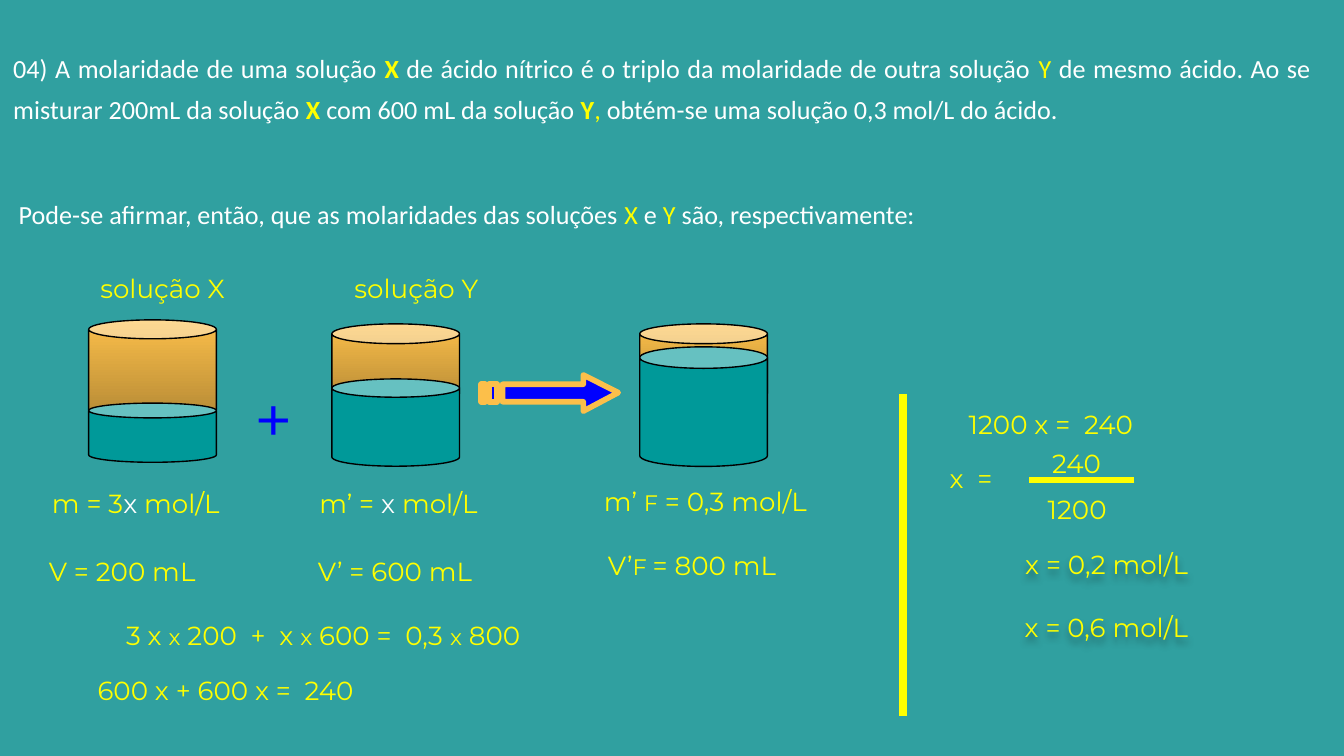
from lxml import etree
from pptx import Presentation
from pptx.dml.color import RGBColor
from pptx.enum.shapes import MSO_CONNECTOR, MSO_SHAPE
from pptx.enum.text import MSO_ANCHOR, MSO_AUTO_SIZE, PP_ALIGN
from pptx.oxml import parse_xml
from pptx.oxml.ns import nsdecls, qn
from pptx.util import Pt

CAN = MSO_SHAPE.CAN
LINE = MSO_CONNECTOR.STRAIGHT
MIDDLE, TOP = MSO_ANCHOR.MIDDLE, MSO_ANCHOR.TOP
LEFT, MID, RIGHT = PP_ALIGN.LEFT, PP_ALIGN.CENTER, PP_ALIGN.RIGHT
FULL = PP_ALIGN.JUSTIFY
FIT, FIXED = MSO_AUTO_SIZE.SHAPE_TO_FIT_TEXT, MSO_AUTO_SIZE.NONE

THEME = {
    "back": "30A0A0", "white": "FFFFFF", "yellow": "FFFF00", "blue": "0000FF",
    "black": "000000", "amber": "FCBF4A", "brown": "B48935", "teal": "009999",
    "body": "Calibri", "math": "Montserrat",
    "size": 14, "small": 12, "big": 36,
}

# Run styles: colour, size, bold
STYLES = {
    "w": ("white", "size", False),
    "y": ("yellow", "size", False),
    "b": ("yellow", "size", True),
    "s": ("yellow", "small", False),
    "p": ("blue", "big", False),
}

# Problem statement: box, runs
STATEMENT = [
    ((0, 20.2, 709.2, 49.7), [
        ("04) A molaridade de uma solução ", "w"), ("X", "b"),
        (" de ácido nítrico é o triplo da molaridade de outra solução ", "w"),
        ("Y ", "y"),
        ("de mesmo ácido. Ao se misturar 200mL da solução ", "w"), ("X ", "b"),
        ("com 600 mL da solução ", "w"), ("Y", "b"), (",", "y"),
        (" obtém-se uma solução 0,3 mol/L do ácido.", "w")]),
    ((2.9, 98.6, 707, 27.4), [
        ("Pode-se afirmar, então, que as molaridades das soluções ", "w"),
        ("X", "y"), (" e ", "w"), ("Y ", "y"),
        ("são, respectivamente:", "w")]),
]

# Beakers: left, then (top, height, rim) of the vessel and of the liquid
BEAKERS = [
    (47.5, (171.4, 53.3, 0.19), (216, 31.7, 0.25)),
    (177.8, (173.5, 42.5, 0.25), (203, 46.8, 0.21)),
    (342.7, (173.5, 42.5, 0.25), (185.8, 64.1, 0.18)),
]
WIDTH = 68.4

# Labels and sums: left, top, width, runs
LABELS = [
    (41.8, 142.6, 90.7, [("solução X", "y")]),
    (177.8, 142.6, 90.7, [("solução Y", "y")]),
    (16.6, 257.8, 112.3, [("m = 3", "y"), ("x", "w"), (" mol/L", "y")]),
    (15.1, 293.8, 100.8, [("V = 200 mL", "y")]),
    (159.8, 257.8, 107.3, [("m’ = ", "y"), ("x", "w"), (" mol/L", "y")]),
    (159.1, 293.8, 105.1, [("V’ = 600 mL", "y")]),
    (311, 256.3, 133.9, [("m’ ", "y"), ("F", "s"), (" = 0,3 mol/L", "y")]),
    (314.6, 290.9, 112.3, [("V’", "y"), ("F ", "s"), ("= 800 mL", "y")]),
    (43.2, 328.3, 259.9, [
        ("3 x ", "y"), ("x", "s"), (" 200  +  x ", "y"), ("x", "s"),
        (" 600 =  0,3 ", "y"), ("x", "s"), (" 800", "y")]),
    (36, 357.8, 169.9, [("600 x + 600 x =  240", "y")]),
    (504, 215.3, 118.1, [("1200 x =  240", "y")]),
    (499, 244.1, 42.5, [("x  =", "y")]),
    (550.8, 260.6, 52.6, [("1200", "y")]),
    (555.1, 236.2, 43.2, [("240", "y")]),
]
HEIGHT = 24.5

# Results: top, text
RESULTS = [(290.2, "x = 0,2 mol/L "), (324, "x = 0,6 mol/L ")]

# Rules: start x, y, end x, y, weight
RULES = [(483.8, 211, 483.8, 383.8, 4.5), (607.7, 257, 551.5, 257, 3)]

# Arrow: head and two tail bars
HIGH, LOW = 205.9, 215.3
HEAD = [(312.5, 200.9), (312.5, HIGH), (269.3, HIGH), (269.3, LOW),
        (312.5, LOW), (312.5, 220.3), (331.2, 210.4)]
BARS = [(262.1, 266.4), (257.8, 259.9)]


def tint(name):
    return RGBColor.from_string(THEME[name])


def add_text(slide, box, runs, face, align=MID, wrap=False, fit=FIT):
    shape = slide.shapes.add_textbox(*map(Pt, box))
    frame = shape.text_frame
    frame.word_wrap = wrap
    frame.auto_size = fit
    frame.vertical_anchor = MIDDLE if wrap else TOP
    para = frame.paragraphs[0]
    para.alignment = align
    if wrap:
        para.line_spacing = 1.3
    for text, style in runs:
        run = para.add_run()
        run.text = text
        color, size, bold = STYLES[style]
        run.font.name = THEME[face]
        run.font.size = Pt(THEME[size])
        run.font.bold = bold
        run.font.color.rgb = tint(color)
    return shape


def add_can(slide, left, part):
    top, high, rim = part
    can = slide.shapes.add_shape(CAN, Pt(left), Pt(top), Pt(WIDTH), Pt(high))
    can.adjustments[0] = rim
    can.shadow.inherit = False
    can.line.color.rgb = tint("black")
    can.line.width = Pt(0.75)
    return can


def add_arrow(slide):
    bars = [[(a, HIGH), (a, LOW), (b, LOW), (b, HIGH)] for a, b in BARS]
    form = None
    for path in [HEAD] + bars:
        dots = [(Pt(x), Pt(y)) for x, y in path]
        if form is None:
            form = slide.shapes.build_freeform(*dots[0], scale=1.0)
        else:
            form.move_to(*dots[0])
        form.add_line_segments(dots[1:], close=True)
    arrow = form.convert_to_shape()
    arrow.shadow.inherit = False
    arrow.fill.solid()
    arrow.fill.fore_color.rgb = tint("blue")
    arrow.line.color.rgb = tint("amber")
    arrow.line.width = Pt(3)


def main():
    deck = Presentation()
    deck.slide_width, deck.slide_height = Pt(720), Pt(405)
    slide = deck.slides.add_slide(deck.slide_layouts[6])
    slide.background.fill.solid()
    slide.background.fill.fore_color.rgb = tint("back")

    # Statement
    for box, runs in STATEMENT:
        add_text(slide, box, runs, "body", FULL, True)

    # Beakers
    for left, vessel, liquid in BEAKERS:
        fill = add_can(slide, left, vessel).fill
        fill.gradient()
        fill.gradient_angle = 270
        for stop, name in zip(fill.gradient_stops, ("amber", "brown")):
            stop.color.rgb = tint(name)
        fill = add_can(slide, left, liquid).fill
        fill.solid()
        fill.fore_color.rgb = tint("teal")

    # Arrow and outlined plus sign
    add_arrow(slide)
    plus = add_text(slide, (132.5, 198.7, 28, 21.6), [("+", "p")], "math",
                    fit=FIXED)
    edge = parse_xml(
        f'<a:ln {nsdecls("a")} w="{Pt(0.75)}"><a:solidFill>'
        f'<a:srgbClr val="{THEME["white"]}"/></a:solidFill></a:ln>')
    font = plus.text_frame.paragraphs[0].runs[0].font
    font._element.insert(0, edge)

    # Labels and sums
    for left, top, wide, runs in LABELS:
        add_text(slide, (left, top, wide, HEIGHT), runs, "math")

    # Results with a soft shadow
    for top, text in RESULTS:
        shape = add_text(slide, (529.9, top, 117.4, HEIGHT), [(text, "y")],
                         "math", RIGHT)
        shape._element.spPr.append(parse_xml(
            f'<a:effectLst {nsdecls("a")}><a:outerShdw blurRad="{Pt(4)}" '
            f'dist="{Pt(3)}" dir="5400000"><a:srgbClr val="{THEME["black"]}">'
            '<a:alpha val="40000"/></a:srgbClr></a:outerShdw></a:effectLst>'))

    # Divider and fraction bar
    for *ends, weight in RULES:
        rule = slide.shapes.add_connector(LINE, *map(Pt, ends))
        rule.line.color.rgb = tint("yellow")
        rule.line.width = Pt(weight)
        etree.SubElement(rule._element.spPr, qn("a:effectLst"))

    deck.save("out.pptx")


if __name__ == "__main__":
    main()
